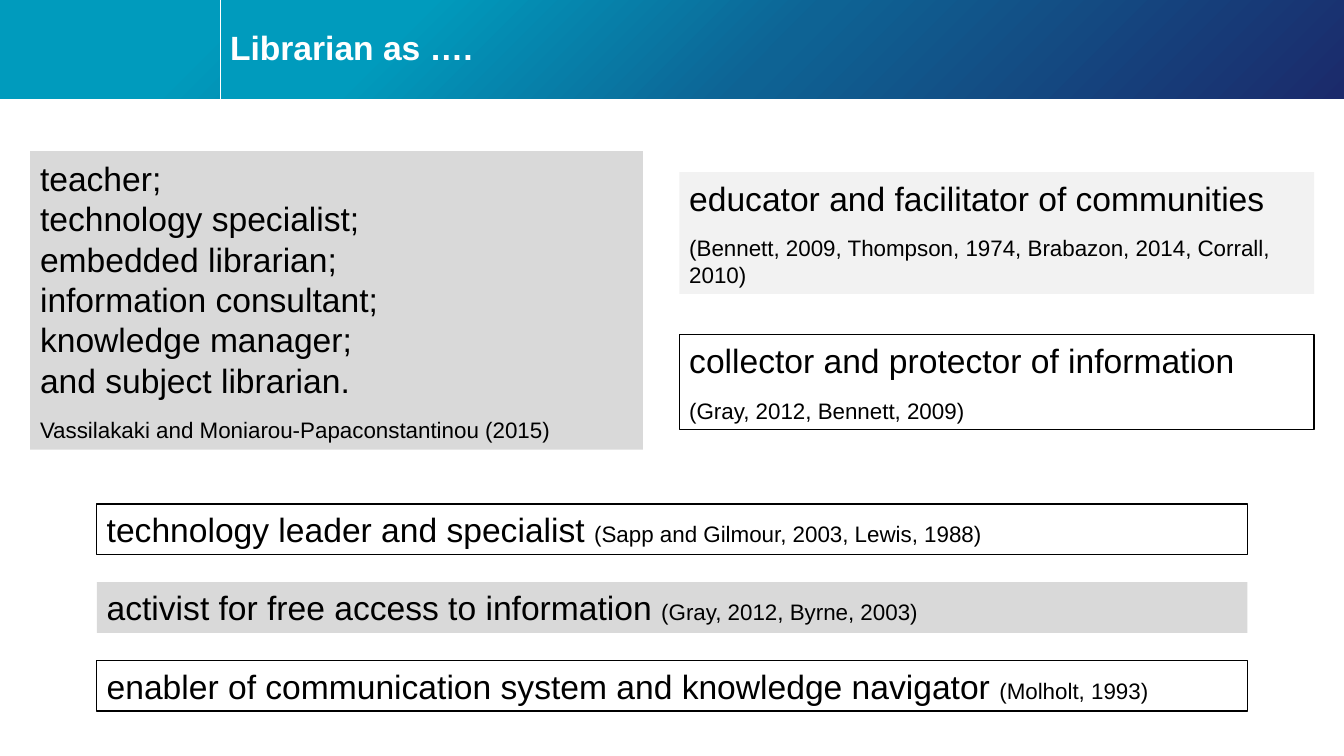
import pptx
import pptx.util
import pptx.dml.color
import pptx.enum.shapes
import pptx.enum.text
import pptx.oxml
import pptx.oxml.ns
from pptx.util import Cm

# Content
TITLE = "Librarian as …."
BIG, SMALL = 24, 16

# Cards: left, top, width, height, fill, roles, citation
CARDS = [
    (0.76, 3.81, 15.44, 7.52, "D9D9D9",
     ["teacher;", "technology specialist;", "embedded librarian;",
      "information consultant;", "knowledge manager;", "and subject librarian."],
     "Vassilakaki and Moniarou-Papaconstantinou (2015)"),
    (17.12, 4.34, 16, 3.07, "F2F2F2",
     ["educator and facilitator of communities"],
     "(Bennett, 2009, Thompson, 1974, Brabazon, 2014, Corrall, 2010)"),
    (17.12, 8.43, 16, 2.39, None,
     ["collector and protector of information"],
     "(Gray, 2012, Bennett, 2009)"),
]
# Bars: fill, role, citation
BARS = [
    (None, "technology leader and specialist ", "(Sapp and Gilmour, 2003, Lewis, 1988)"),
    ("D9D9D9", "activist for free access to information ", "(Gray, 2012, Byrne, 2003)"),
    (None, "enabler of communication system and knowledge navigator ", "(Molholt, 1993)"),
]
GRADIENT = [(17, "009BBD"), (50, "0E6394"), (100, "1B2A6B")]

# Layout in centimetres
SLIDE_W, SLIDE_H = 33.87, 19.05
HEADER_H, DIVIDER_X = 2.49, 5.55
BAR_LEFT, BAR_TOP, BAR_W, BAR_H, BAR_PITCH = 2.44, 12.7, 29, 1.28, 1.97
CITATION_GAP = 11.5

deck = pptx.Presentation()
deck.slide_width, deck.slide_height = Cm(SLIDE_W), Cm(SLIDE_H)
page = deck.slides.add_slide(deck.slide_layouts[6])


def color(hex_code):
    return pptx.dml.color.RGBColor.from_string(hex_code)


def add_rectangle(left, top, width, height):
    box = page.shapes.add_shape(pptx.enum.shapes.MSO_SHAPE.RECTANGLE,
                                Cm(left), Cm(top), Cm(width), Cm(height))
    box.shadow.inherit = False
    box.line.fill.background()
    return box


def add_band(left):
    band = add_rectangle(left, 0, SLIDE_W - left, HEADER_H)
    band.fill.background()
    stops = "".join(f'<a:gs pos="{pos * 1000}"><a:srgbClr val="{code}"/></a:gs>'
                    for pos, code in GRADIENT)
    gradient = pptx.oxml.parse_xml(
        f'<a:gradFill {pptx.oxml.ns.nsdecls("a")} rotWithShape="1">'
        f'<a:gsLst>{stops}</a:gsLst><a:lin ang="2700000" scaled="0"/></a:gradFill>')
    properties = band.element.spPr
    properties.replace(properties.find(pptx.oxml.ns.qn("a:noFill")), gradient)


def add_span(para, text, size, hex_code="000000", bold=False):
    span = para.add_run()
    span.text = text
    span.font.name = "Arial"
    span.font.size = pptx.util.Pt(size)
    span.font.bold = bold
    span.font.color.rgb = color(hex_code)


def add_text_box(left, top, width, height, fill, lines):
    """Each line is a list of (text, size) runs and the space before it."""
    box = add_rectangle(left, top, width, height)
    if fill:
        box.fill.solid()
        box.fill.fore_color.rgb = color(fill)
    else:
        box.fill.background()
        box.line.color.rgb = color("000000")
        box.line.width = pptx.util.Pt(1)
    frame = box.text_frame
    frame.word_wrap = True
    frame.auto_size = pptx.enum.text.MSO_AUTO_SIZE.SHAPE_TO_FIT_TEXT
    frame.vertical_anchor = pptx.enum.text.MSO_ANCHOR.MIDDLE
    for number, (spans, gap) in enumerate(lines):
        para = frame.add_paragraph() if number else frame.paragraphs[0]
        para.alignment = pptx.enum.text.PP_ALIGN.LEFT
        if gap:
            para.space_before = pptx.util.Pt(gap)
        for text, size in spans:
            add_span(para, text, size)


# Header bands and divider
add_band(0)
add_band(DIVIDER_X)
divider = page.shapes.add_connector(pptx.enum.shapes.MSO_CONNECTOR.STRAIGHT,
                                    Cm(DIVIDER_X), 0, Cm(DIVIDER_X), Cm(HEADER_H))
divider.line.color.rgb = color("FFFFFF")
divider.line.width = pptx.util.Pt(0.5)
divider.element.spPr.append(
    pptx.oxml.parse_xml(f'<a:effectLst {pptx.oxml.ns.nsdecls("a")}/>'))

# Title
title = page.shapes.add_textbox(Cm(DIVIDER_X), Cm(0.28), Cm(SLIDE_W - DIVIDER_X), Cm(1.93))
title.text_frame.word_wrap = True
title.text_frame.vertical_anchor = pptx.enum.text.MSO_ANCHOR.MIDDLE
title_para = title.text_frame.paragraphs[0]
title_para.line_spacing = 0.9
add_span(title_para, TITLE, BIG, "FFFFFF", bold=True)

# Cards with the citation below the roles
for left, top, width, height, fill, roles, citation in CARDS:
    lines = [([(role, BIG)], 0) for role in roles]
    lines.append(([(citation, SMALL)], CITATION_GAP))
    add_text_box(left, top, width, height, fill, lines)

# Bars with the citation beside the role
for row, (fill, role, citation) in enumerate(BARS):
    add_text_box(BAR_LEFT, BAR_TOP + row * BAR_PITCH, BAR_W, BAR_H, fill,
                 [([(role, BIG), (citation, SMALL)], 0)])

deck.save("out.pptx")
